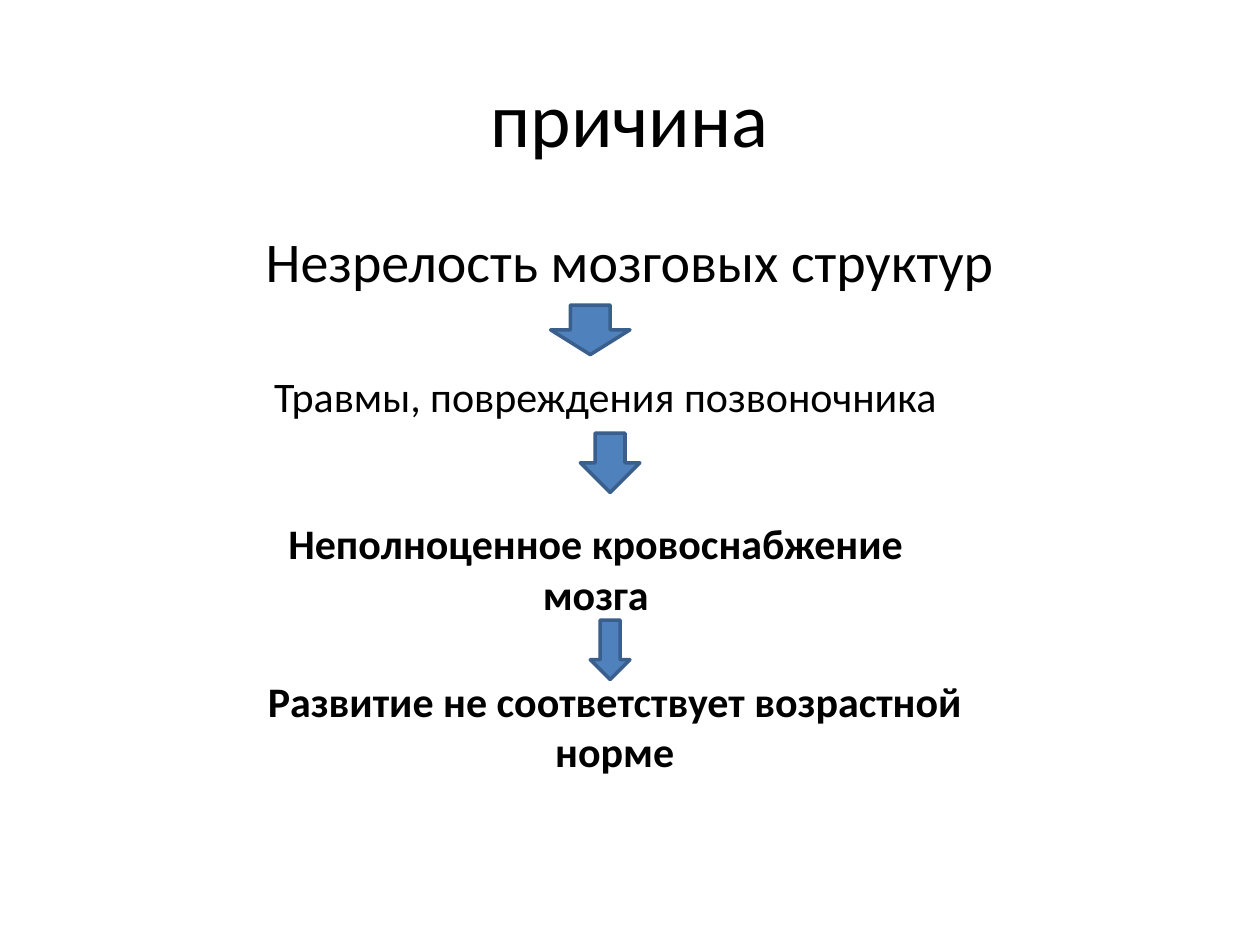
from pptx import Presentation
from pptx import util as u
from pptx.dml.color import RGBColor
from pptx.enum import shapes, text

THEME = {
    "font": "Calibri",
    "ink": RGBColor.from_string("000000"),
    "arrow_fill": RGBColor.from_string("4F81BD"),
    "arrow_line": RGBColor.from_string("3A5F8C"),
    "arrow_line_width": u.Pt(2),
    "title": u.Pt(44),
    "lead": u.Pt(32),
    "step": u.Pt(24),
}

# Positions are left, top, width, height in centimetres.
TITLE = ("причина", (1.27, 0.76, 22.86, 3.18))
LEAD = ("Незрелость мозговых структур", (1.27, 4.45, 22.86, 12.57))
STEPS = [
    # wording, position, bold, arrow leading to the step
    ("Травмы, повреждения позвоночника", (4.37, 7.34, 15.67, 1.27), False,
     (11.1, 6.15, 1.6, 1)),
    ("Неполноценное кровоснабжение мозга", (4.57, 10.31, 14.88, 2.31), True,
     (11.7, 8.73, 1.2, 1.2)),
    ("Развитие не соответствует возрастной норме", (4.75, 13.49, 15.29, 2.31), True,
     (11.9, 12.5, 0.8, 1.2)),
]


def lengths(position):
    return [u.Cm(value) for value in position]


def add_text(slide, wording, position, size, bold=False,
             anchor=text.MSO_ANCHOR.TOP, space_before=0):
    frame = slide.shapes.add_textbox(*lengths(position)).text_frame
    frame.word_wrap = True
    frame.vertical_anchor = anchor
    frame.text = wording
    paragraph = frame.paragraphs[0]
    paragraph.alignment = text.PP_ALIGN.CENTER
    paragraph.space_before = u.Pt(space_before)
    font = paragraph.runs[0].font
    font.name = THEME["font"]
    font.size = size
    font.bold = bold
    font.color.rgb = THEME["ink"]


def add_arrow(slide, position):
    arrow = slide.shapes.add_shape(shapes.MSO_SHAPE.DOWN_ARROW, *lengths(position))
    arrow.shadow.inherit = False
    arrow.fill.solid()
    arrow.fill.fore_color.rgb = THEME["arrow_fill"]
    arrow.line.color.rgb = THEME["arrow_line"]
    arrow.line.width = THEME["arrow_line_width"]


def main():
    deck = Presentation()
    deck.slide_width, deck.slide_height = u.Cm(25.4), u.Cm(19.05)
    slide = deck.slides.add_slide(deck.slide_layouts[6])

    add_text(slide, *TITLE, THEME["title"], anchor=text.MSO_ANCHOR.MIDDLE)
    add_text(slide, *LEAD, THEME["lead"], space_before=6.4)
    for wording, position, bold, arrow_position in STEPS:
        add_arrow(slide, arrow_position)
        add_text(slide, wording, position, THEME["step"], bold)

    deck.save("out.pptx")


if __name__ == "__main__":
    main()
